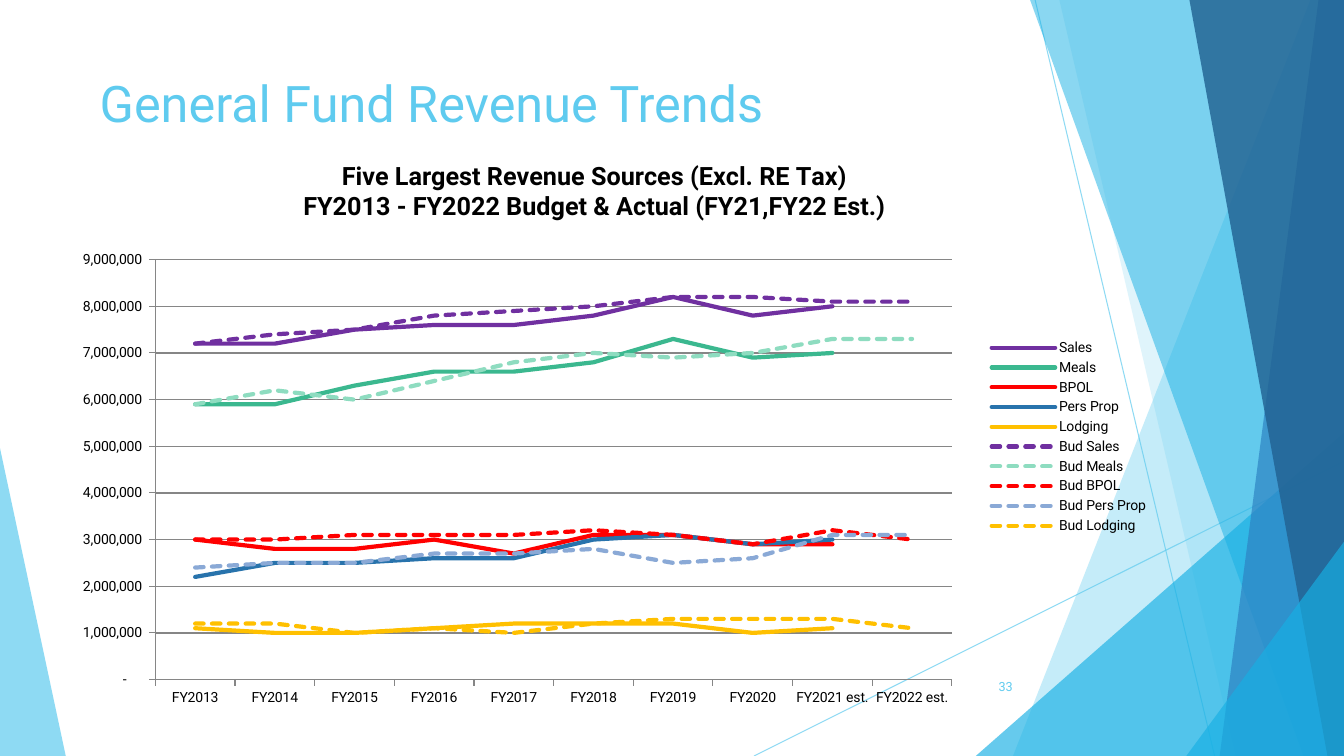
import pptx
import pptx.util
import pptx.chart.data
import pptx.dml.color
import pptx.enum.chart
import pptx.enum.dml
import pptx.enum.shapes
import pptx.enum.text
import pptx.oxml
import pptx.oxml.ns
from lxml import etree

Pt = pptx.util.Pt
FONT = "Roboto"
SKY, CYAN, BLUE, NAVY = "5FCBEF", "17B0E4", "2E83C3", "226292"
WIDE, HIGH = 960, 540
CHART_WIDE, CHART_HIGH = 780, 408

# Outline points, colour, opacity in percent
PANES = [
    ([(936, 0), (723.6, HIGH), (WIDE, HIGH), (WIDE, 0)], SKY, 36),
    ([(756.7, 0), (882.7, HIGH), (WIDE, HIGH), (WIDE, 0)], SKY, 20),
    ([(697, HIGH), (WIDE, 309), (WIDE, HIGH)], CYAN, 66),
    ([(735.8, 0), (931, HIGH), (WIDE, HIGH), (WIDE, 0)], CYAN, 50),
    ([(941.8, 0), (871.2, HIGH), (WIDE, HIGH), (WIDE, 0)], BLUE, 70),
    ([(849.6, 0), (948.2, HIGH), (WIDE, HIGH), (WIDE, 0)], NAVY, 82),
    ([(847.4, HIGH), (WIDE, 387), (WIDE, HIGH)], CYAN, 66),
]

YEARS = [f"FY{year}" for year in range(2013, 2021)] + ["FY2021 est.", "FY2022 est."]
HEADING = ["Five Largest Revenue Sources (Excl. RE Tax)",
           "FY2013 - FY2022 Budget & Actual (FY21,FY22 Est.)"]
# Name, colour, values in millions
ACTUAL = [
    ("Sales", "7030A0", [7.2, 7.2, 7.5, 7.6, 7.6, 7.8, 8.2, 7.8, 8.0, None]),
    ("Meals", "3BB88F", [5.9, 5.9, 6.3, 6.6, 6.6, 6.8, 7.3, 6.9, 7.0, None]),
    ("BPOL", "FF0000", [3.0, 2.8, 2.8, 3.0, 2.7, 3.1, 3.1, 2.9, 2.9, None]),
    ("Pers Prop", "2873AC", [2.2, 2.5, 2.5, 2.6, 2.6, 3.0, 3.1, 2.9, 3.0, None]),
    ("Lodging", "FFC000", [1.1, 1.0, 1.0, 1.1, 1.2, 1.2, 1.2, 1.0, 1.1, None]),
]
BUDGET = [
    ("Bud Sales", "7030A0", [7.2, 7.4, 7.5, 7.8, 7.9, 8.0, 8.2, 8.2, 8.1, 8.1]),
    ("Bud Meals", "8EDCC0", [5.9, 6.2, 6.0, 6.4, 6.8, 7.0, 6.9, 7.0, 7.3, 7.3]),
    ("Bud BPOL", "FF0000", [3.0, 3.0, 3.1, 3.1, 3.1, 3.2, 3.1, 2.9, 3.2, 3.0]),
    ("Bud Pers Prop", "8AA9D6", [2.4, 2.5, 2.5, 2.7, 2.7, 2.8, 2.5, 2.6, 3.1, 3.1]),
    ("Bud Lodging", "FFC000", [1.2, 1.2, 1.0, 1.1, 1.0, 1.2, 1.3, 1.3, 1.3, 1.1]),
]


def paint(color, code):
    color.rgb = pptx.dml.color.RGBColor.from_string(code)


def style(font, size, code, bold=False):
    font.name, font.size, font.bold = FONT, Pt(size), bold
    paint(font.color, code)


def fade(shape, alpha):
    """Set the opacity, in percent, of the one colour of a shape."""
    color = shape.element.xpath("./p:spPr//a:srgbClr")[0]
    node = etree.SubElement(color, pptx.oxml.ns.qn("a:alpha"))
    node.set("val", str(alpha * 1000))


def add_pane(slide, points, code, alpha):
    spots = [(Pt(x), Pt(y)) for x, y in points]
    form = slide.shapes.build_freeform(*spots[0])
    form.add_line_segments(spots[1:], close=True)
    pane = form.convert_to_shape()
    pane.shadow.inherit = False
    pane.fill.solid()
    paint(pane.fill.fore_color, code)
    pane.line.fill.background()
    fade(pane, alpha)


def add_ray(slide, *ends):
    ray = slide.shapes.add_connector(
        pptx.enum.shapes.MSO_CONNECTOR.STRAIGHT, *[Pt(end) for end in ends])
    ray.line.width = Pt(0.75)
    paint(ray.line.color, SKY)
    fade(ray, 70)
    etree.SubElement(ray.element.spPr, pptx.oxml.ns.qn("a:effectLst"))


def add_title(slide, text):
    title = slide.shapes.title
    title.left, title.top, title.width, title.height = Pt(64), Pt(48), Pt(667), Pt(104)
    frame = title.text_frame
    frame.text = text
    frame.vertical_anchor = pptx.enum.text.MSO_ANCHOR.TOP
    para = frame.paragraphs[0]
    para.alignment = pptx.enum.text.PP_ALIGN.LEFT
    style(para.font, 36, SKY)
    slide.shapes.element.append(title.element)


def add_number(slide, text):
    box = slide.shapes.add_textbox(Pt(676.5), Pt(476), Pt(54), Pt(29))
    frame = box.text_frame
    frame.word_wrap = True
    frame.vertical_anchor = pptx.enum.text.MSO_ANCHOR.MIDDLE
    para = frame.paragraphs[0]
    para.text = text
    para.alignment = pptx.enum.text.PP_ALIGN.RIGHT
    style(para.font, 9, SKY)


def place(chart, name, index, inner=False, **sides):
    """Pin a chart part, with its sides in points from the chart corner."""
    part = chart.element.xpath(f"c:chart/c:{name}")[0]
    for old in part.xpath("c:layout"):
        part.remove(old)
    tags = [("layoutTarget", "inner")] if inner else []
    tags += [(f"{side}Mode", "edge") for side in "xy"]
    tags += [(side, size / (CHART_WIDE if side in "xw" else CHART_HIGH))
             for side, size in sides.items()]
    body = "".join(f'<c:{tag} val="{val}"/>' for tag, val in tags)
    part.insert(index, pptx.oxml.parse_xml(
        f'<c:layout {pptx.oxml.ns.nsdecls("c")}>'
        f"<c:manualLayout>{body}</c:manualLayout></c:layout>"))


def set_axes(chart):
    value = chart.value_axis
    value.minimum_scale, value.maximum_scale, value.major_unit = 0, 9e6, 1e6
    value.tick_labels.number_format = r'_(* #,##0_);_(* \(#,##0\);_(* "-"??_);_(@_)'
    value.tick_labels.number_format_is_linked = False
    value.has_major_gridlines = True
    for axis in (value, chart.category_axis):
        axis.major_tick_mark = pptx.enum.chart.XL_TICK_MARK.OUTSIDE
        style(axis.tick_labels.font, 10, "000000")
    for item, width in ((value, 0.75), (chart.category_axis, 0.75),
                        (value.major_gridlines, 1)):
        item.format.line.width = Pt(width)
        paint(item.format.line.color, "868686")


def set_lines(chart):
    chart.plots[0].vary_by_categories = False
    for row, (name, code, vals) in zip(chart.plots[0].series, ACTUAL + BUDGET):
        row.smooth = False
        row.marker.style = pptx.enum.chart.XL_MARKER_STYLE.NONE
        line = row.format.line
        line.width = Pt(3)
        paint(line.color, code)
        if name.startswith("Bud "):
            line.dash_style = pptx.enum.dml.MSO_LINE.SQUARE_DOT
    for line in chart.element.xpath(".//c:ser/c:spPr/a:ln"):
        line.set("cap", "rnd")
        for dash in line.xpath("a:prstDash"):
            dash.set("val", "sysDash")


def set_heading(chart):
    chart.has_title = True
    frame = chart.chart_title.text_frame
    frame.text = "\n".join(HEADING)
    for para in frame.paragraphs:
        style(para.font, 18, "000000", True)
    place(chart, "title", 1, x=166.5, y=4.5)


def set_legend(chart):
    chart.has_legend = True
    legend = chart.legend
    legend.position = pptx.enum.chart.XL_LEGEND_POSITION.RIGHT
    legend.include_in_layout = False
    style(legend.font, 10, "000000")
    place(chart, "legend", 1, x=653, y=132, w=125, h=144)


def add_trends(slide):
    data = pptx.chart.data.CategoryChartData()
    data.categories = YEARS
    for name, code, vals in ACTUAL + BUDGET:
        data.add_series(name, [val and round(val * 1e6) for val in vals])
    chart = slide.shapes.add_chart(
        pptx.enum.chart.XL_CHART_TYPE.LINE,
        Pt(48), Pt(108), Pt(CHART_WIDE), Pt(CHART_HIGH), data).chart
    style(chart.font, 10, "000000")
    set_axes(chart)
    set_lines(chart)
    set_heading(chart)
    set_legend(chart)
    place(chart, "plotArea", 0, inner=True, x=63, y=77.5, w=569, h=300)


def main():
    deck = pptx.Presentation()
    deck.slide_width, deck.slide_height = Pt(WIDE), Pt(HIGH)
    slide = deck.slides.add_slide(deck.slide_layouts.get_by_name("Title Only"))
    add_pane(slide, [(0, 320), (47, HIGH), (0, HIGH)], SKY, 70)
    add_ray(slide, 538.6, HIGH, WIDE, 329.5)
    add_ray(slide, 739.4, 0, 867.6, HIGH)
    for pane in PANES:
        add_pane(slide, *pane)
    add_title(slide, "General Fund Revenue Trends")
    add_number(slide, "33")
    add_trends(slide)
    deck.save("out.pptx")


if __name__ == "__main__":
    main()
